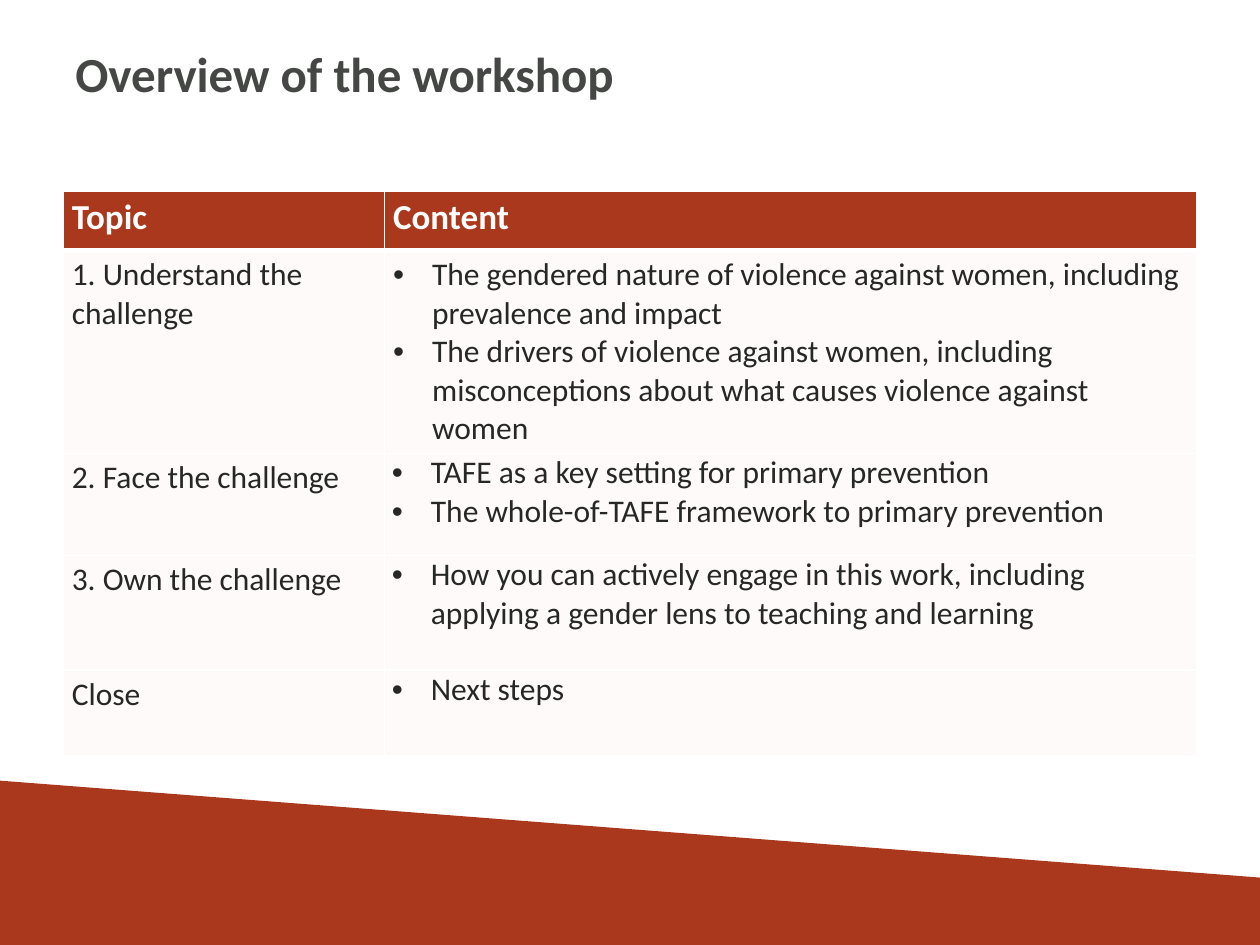
from lxml import etree
from pptx import Presentation
from pptx.dml.color import RGBColor
from pptx.enum.shapes import MSO_SHAPE
from pptx.enum.text import MSO_ANCHOR
from pptx.oxml.ns import qn
from pptx.util import Inches, Pt

RECT = MSO_SHAPE.RECTANGLE
TOP = MSO_ANCHOR.TOP
FONT = "Calibri"
COLORS = {"rust": "AA381D", "title": "454745", "text": "272727",
          "tint": "FBEAE6", "white": "FFFFFF"}
COLS = [2.55, 6.45]
HEIGHTS = [0.47, 1.61, 0.81, 0.91, 0.68]
HEAD = ["Topic", "Content"]
TOPICS = [
    ("1. Understand the challenge", [
        "The gendered nature of violence against women, including prevalence and impact",
        "The drivers of violence against women, including misconceptions about "
        "what causes violence against women"]),
    ("2. Face the challenge", [
        "TAFE as a key setting for primary prevention",
        "The whole-of-TAFE framework to primary prevention"]),
    ("3. Own the challenge", [
        "How you can actively engage in this work, including applying a gender "
        "lens to teaching and learning"]),
    ("Close", ["Next steps"]),
]


def rgb(name):
    return RGBColor.from_string(COLORS[name])


def add_run(para, text, size, color, bold=False):
    run = para.add_run()
    run.text = text
    font = run.font
    font.name, font.size, font.bold = FONT, Pt(size), bold
    font.color.rgb = rgb(color)


def add_bullet(para):
    props = para._p.get_or_add_pPr()
    props.set("marL", str(Inches(0.31)))
    props.set("indent", str(-Inches(0.31)))
    etree.SubElement(props, qn("a:buFont"), typeface="Arial")
    etree.SubElement(props, qn("a:buChar"), char="•")


def set_edges(cell, top=1, bottom=1):
    props = cell._tc.get_or_add_tcPr()
    for tag, width in (("lnL", 1), ("lnR", 1), ("lnT", top), ("lnB", bottom)):
        line = etree.SubElement(props, qn("a:" + tag), w=str(Pt(width)))
        fill = etree.SubElement(line, qn("a:solidFill"))
        etree.SubElement(fill, qn("a:srgbClr"), val=COLORS["white"])


def set_fill(cell, color, alpha=None):
    cell.fill.solid()
    cell.fill.fore_color.rgb = rgb(color)
    if alpha:
        tone = cell._tc.tcPr.find(qn("a:solidFill"))[0]
        etree.SubElement(tone, qn("a:alpha"), val=str(alpha * 1000))


def set_insets(cell, side, end):
    cell.margin_left = cell.margin_right = Inches(side)
    cell.margin_top = cell.margin_bottom = Inches(end)


def add_band(slide, left, top, width, height):
    band = slide.shapes.add_shape(RECT, left, top, width, height)
    band.rotation = 4.4
    band.shadow.inherit = False
    band.fill.solid()
    band.fill.fore_color.rgb = rgb("rust")
    band.line.fill.background()


def add_title(slide, left, top, width, height):
    frame = slide.shapes.add_textbox(left, top, width, height).text_frame
    frame.word_wrap = True
    frame.vertical_anchor = TOP
    add_run(frame.paragraphs[0], "Overview of the workshop", 28, "title", True)


def add_topics(slide, left, top, width, height):
    table = slide.shapes.add_table(len(HEIGHTS), len(COLS), left, top,
                                   width, height).table
    for col, size in zip(table.columns, COLS):
        col.width = int(width * size / sum(COLS))
    for row, size in zip(table.rows, HEIGHTS):
        row.height = int(height * size / sum(HEIGHTS))

    # Header row
    for col, text in enumerate(HEAD):
        cell = table.cell(0, col)
        set_edges(cell, bottom=3)
        set_fill(cell, "rust")
        set_insets(cell, 0.07, 0.04)
        add_run(cell.text_frame.paragraphs[0], text, 20, "white", True)

    # Topic rows: a plain name, then bulleted content
    for row, (topic, points) in enumerate(TOPICS, 1):
        for col, lines in enumerate(([topic], points)):
            cell = table.cell(row, col)
            set_edges(cell, top=3 if row == 1 else 1)
            set_fill(cell, "tint", 20)
            tight = col == 1 and row > 1
            set_insets(cell, *((0.06, 0) if tight else (0.07, 0.04)))
            frame = cell.text_frame
            for i, text in enumerate(lines):
                para = frame.add_paragraph() if i else frame.paragraphs[0]
                if col == 1:
                    add_bullet(para)
                add_run(para, text, 18, "text")


def main():
    deck = Presentation()
    deck.slide_width, deck.slide_height = Inches(10), Inches(7.5)
    slide = deck.slides.add_slide(deck.slide_layouts[6])
    add_band(slide, Inches(-0.27), Inches(6.58), Inches(10.47), Inches(1.33))
    add_title(slide, Inches(0.5), Inches(0.3), Inches(9), Inches(0.87))
    add_topics(slide, Inches(0.5), Inches(1.52), Inches(sum(COLS)),
               Inches(sum(HEIGHTS)))
    deck.save("out.pptx")


if __name__ == "__main__":
    main()
